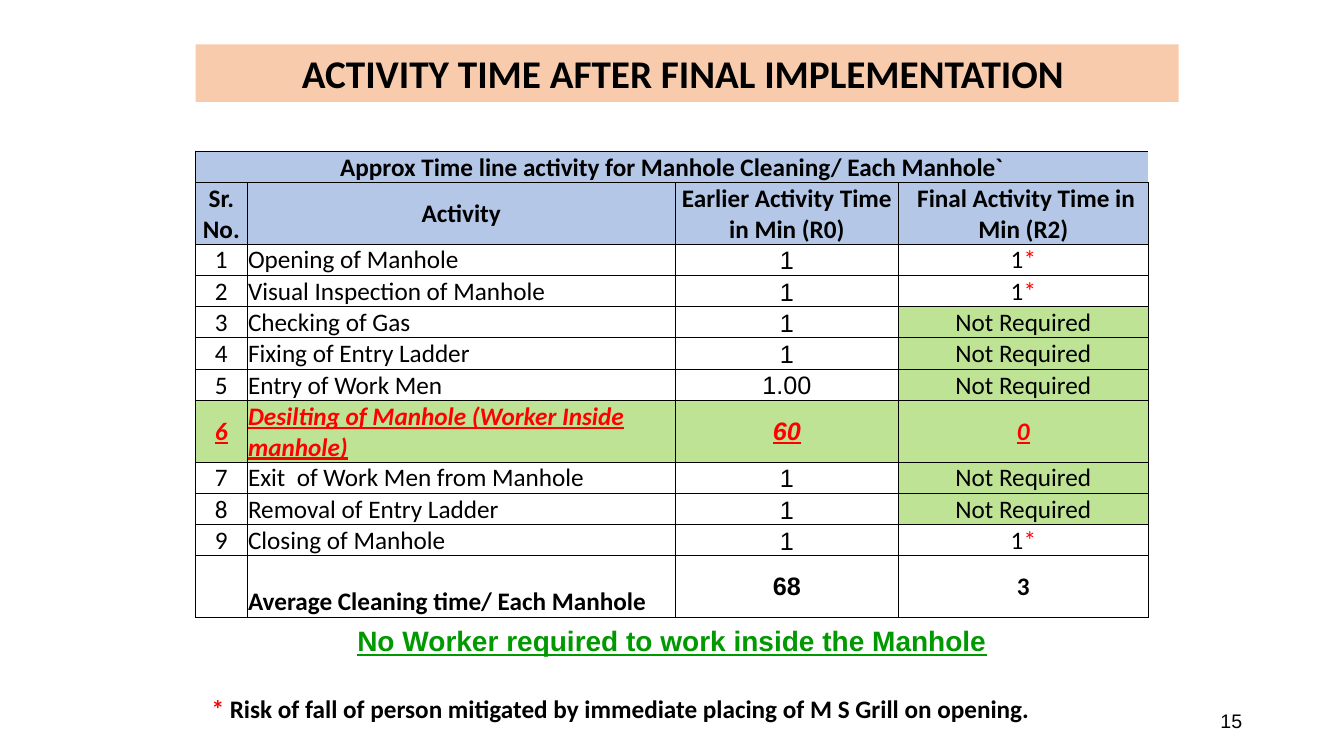
"""Build the slide comparing manhole cleaning activity times."""
from lxml import etree
from pptx import Presentation
from pptx.dml.color import RGBColor
from pptx.enum.shapes import MSO_SHAPE
from pptx.enum.text import MSO_ANCHOR, MSO_AUTO_SIZE, PP_ALIGN
from pptx.oxml.ns import qn
from pptx.util import Inches, Pt

RECTANGLE = MSO_SHAPE.RECTANGLE
TOP, MIDDLE, BOTTOM = MSO_ANCHOR.TOP, MSO_ANCHOR.MIDDLE, MSO_ANCHOR.BOTTOM
LEFT, CENTER, RIGHT = PP_ALIGN.LEFT, PP_ALIGN.CENTER, PP_ALIGN.RIGHT
FIT_SHAPE = MSO_AUTO_SIZE.SHAPE_TO_FIT_TEXT
BLACK, RED, GREEN = "000000", "FF0000", "009900"
PEACH, HEADER_BLUE, HIGHLIGHT = "F8CBAD", "B4C7E7", "BEE395"


def color(value):
    return RGBColor.from_string(value)


def write_text(frame, text, size=18, font="Calibri", ink=BLACK, bold=False,
               italic=False, underline=False, align=CENTER, anchor=TOP):
    """Write one paragraph, with any asterisk in red."""
    frame.word_wrap = True
    frame.vertical_anchor = anchor
    paragraph = frame.paragraphs[0]
    paragraph.alignment = align
    for part in filter(None, text.partition("*")):
        run = paragraph.add_run()
        run.text = part
        run.font.size = Pt(size)
        run.font.name = font
        run.font.bold = bold
        run.font.italic = italic
        run.font.underline = underline
        run.font.color.rgb = color(RED if part == "*" else ink)


presentation = Presentation()
presentation.slide_width = Inches(13.33)
presentation.slide_height = Inches(7.5)
slide = presentation.slides.add_slide(presentation.slide_layouts[6])

title = slide.shapes.add_shape(RECTANGLE, Inches(1.94), Inches(0.44), Inches(9.75), Inches(0.57))
title.shadow.inherit = False
title.fill.solid()
title.fill.fore_color.rgb = color(PEACH)
title.line.fill.background()
write_text(title.text_frame, "ACTIVITY TIME AFTER FINAL IMPLEMENTATION ", size=28, bold=True)
title.text_frame.auto_size = FIT_SHAPE

rows = [
    ("Approx Time line activity for Manhole Cleaning/ Each Manhole`", "", "", ""),
    ("Sr. No.", "Activity", "Earlier Activity Time in Min (R0)", " Final Activity Time in Min (R2)"),
    ("1", "Opening of Manhole", "1", "1*"),
    ("2", "Visual Inspection of Manhole", "1", "1*"),
    ("3", "Checking of Gas", "1", "Not Required"),
    ("4", "Fixing of Entry Ladder", "1", "Not Required"),
    ("5", "Entry of Work Men", "1.00", "Not Required"),
    ("6", "Desilting of Manhole (Worker Inside manhole)", "60", "0"),
    ("7", "Exit  of Work Men from Manhole", "1", "Not Required"),
    ("8", "Removal of Entry Ladder", "1", "Not Required"),
    ("9", "Closing of Manhole", "1", "1*"),
    ("", "Average Cleaning time/ Each Manhole", "68", "3"),
]
COLUMN_WIDTHS = (0.51, 4.25, 2.21, 2.48)
HEADING_ROW, DESILTING_ROW, AVERAGE_ROW = 1, 7, 11
TALL_ROWS = (HEADING_ROW, DESILTING_ROW, AVERAGE_ROW)

table = slide.shapes.add_table(len(rows), len(COLUMN_WIDTHS), Inches(1.94), Inches(1.5),
                               Inches(9.45), Inches(4.58)).table
table.first_row = False
table.horz_banding = False
for column, width in zip(table.columns, COLUMN_WIDTHS):
    column.width = Inches(width)

for row_index, values in enumerate(rows):
    is_tall = row_index in TALL_ROWS
    is_heading = row_index <= HEADING_ROW
    is_desilting = row_index == DESILTING_ROW
    table.rows[row_index].height = Inches(0.61 if is_tall else 0.31)
    for column_index, text in enumerate(values):
        cell = table.cell(row_index, column_index)
        cell.margin_left = cell.margin_right = cell.margin_top = Inches(0.01)
        cell.margin_bottom = Inches(0)

        properties = cell._tc.get_or_add_tcPr()
        for side in ("L", "R", "T", "B"):
            is_outer = (side == "L" and column_index == 0) or (side == "T" and row_index == 0)
            border = etree.SubElement(properties, qn(f"a:ln{side}"), w=str(Pt(1 if is_outer else 0.5)))
            if side == "R" and row_index == 0:
                etree.SubElement(border, qn("a:noFill"))
            else:
                border_fill = etree.SubElement(border, qn("a:solidFill"))
                etree.SubElement(border_fill, qn("a:srgbClr"), val=BLACK)

        if is_heading or is_desilting or text == "Not Required":
            cell.fill.solid()
            cell.fill.fore_color.rgb = color(HEADER_BLUE if is_heading else HIGHLIGHT)
        else:
            cell.fill.background()

        is_activity = column_index == 1 and not is_heading
        is_average_label = is_activity and row_index == AVERAGE_ROW
        write_text(cell.text_frame, text,
                   font="Arial" if column_index == 2 and not is_heading else "Calibri",
                   ink=RED if is_desilting else BLACK,
                   bold=is_heading or is_tall, italic=is_desilting, underline=is_desilting,
                   align=LEFT if is_activity else CENTER)
        cell.vertical_anchor = MIDDLE if is_tall and not is_average_label else BOTTOM
table.cell(0, 0).merge(table.cell(0, 3))

captions = [
    ((9.42, 6.95, 3, 0.4), "15", dict(size=14, font="Arial", align=RIGHT, anchor=MIDDLE)),
    ((2, 6.14, 9.33, 0.44), "No Worker required to work inside the Manhole",
     dict(size=20, font="Arial", ink=GREEN, bold=True, underline=True)),
    ((2, 6.83, 9.69, 0.4),
     "* Risk of fall of person mitigated by immediate placing of M S Grill on opening.",
     dict(bold=True, align=LEFT)),
]
for position, text, text_format in captions:
    caption = slide.shapes.add_textbox(*map(Inches, position))
    write_text(caption.text_frame, text, **text_format)

presentation.save("out.pptx")
